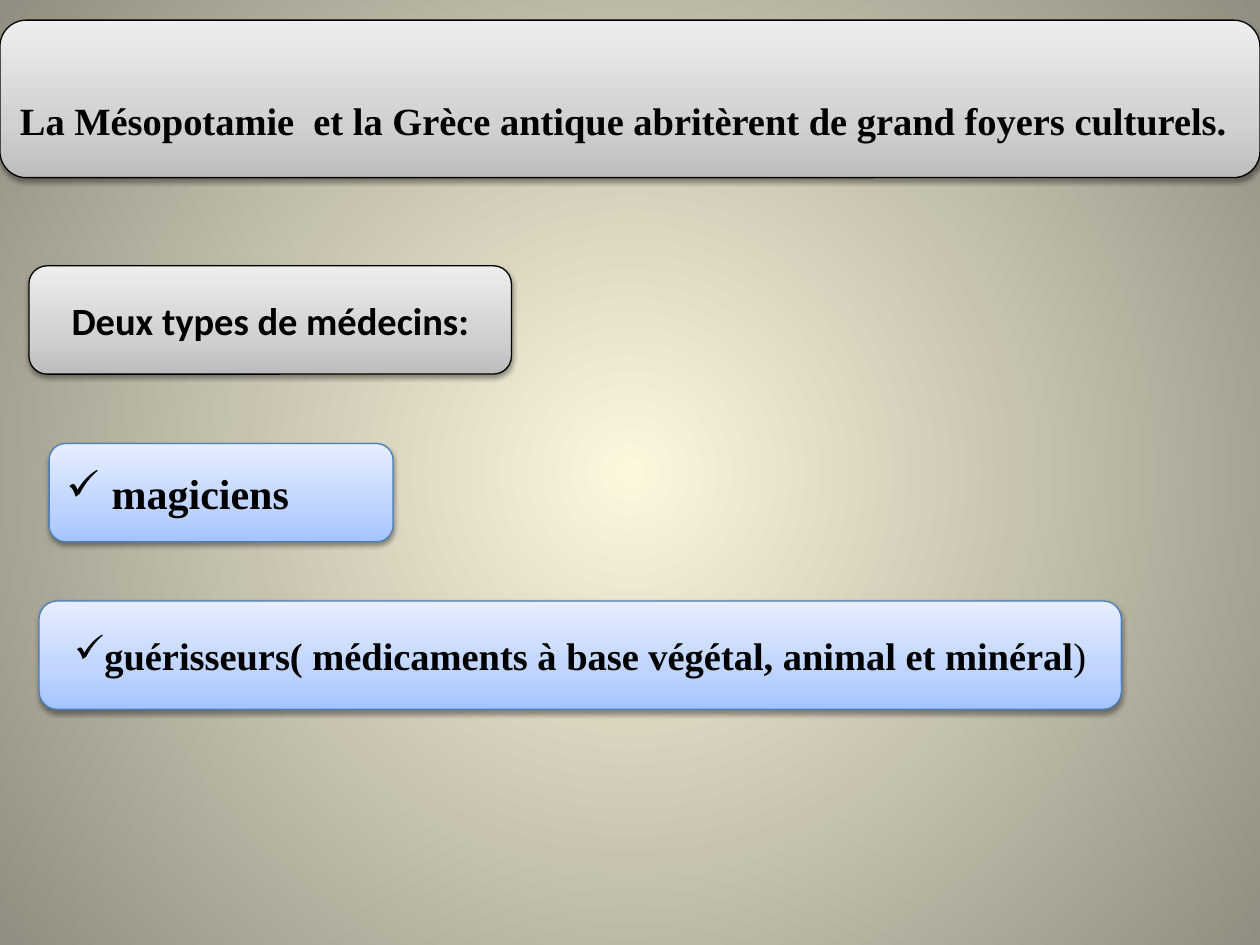
from lxml import etree
from pptx import Presentation
from pptx.dml.color import RGBColor
from pptx.enum.shapes import MSO_SHAPE
from pptx.enum.text import MSO_ANCHOR, PP_ALIGN
from pptx.oxml import parse_xml
from pptx.oxml.ns import nsdecls, qn
from pptx.util import Inches, Pt

ROUNDED = MSO_SHAPE.ROUNDED_RECTANGLE
MIDDLE = MSO_ANCHOR.MIDDLE
LEFT, CENTER = PP_ALIGN.LEFT, PP_ALIGN.CENTER

COLORS = {"text": "000000", "grey_line": "000000", "blue_line": "4B7EBC"}
BACKGROUND = [(0, "FCF7DD"), (100, "918E81")]
GRADIENTS = {
    "grey": [(0, "BDBDBD"), (35, "D1D1D1"), (100, "EEEEEE")],
    "blue": [(0, "A4C4FF"), (35, "BFD4FF"), (100, "E6EEFF")],
}
UPWARD = '<a:lin ang="16200000" scaled="0"/>'
RADIAL = ('<a:path path="circle">'
          '<a:fillToRect l="50000" t="50000" r="50000" b="50000"/></a:path>')
SHADOW = ('<a:outerShdw {} blurRad="{}" dist="{}" dir="5400000" rotWithShape="0">'
          '<a:srgbClr val="000000"><a:alpha val="38000"/></a:srgbClr></a:outerShdw>')


def set_gradient(fill, parent, stops, direction):
    """Give a fill any number of stops, linear or radial."""
    fill.gradient()
    old = parent.find(".//" + qn("a:gradFill"))
    gs = "".join(f'<a:gs pos="{pos * 1000}"><a:srgbClr val="{color}"/></a:gs>'
                 for pos, color in stops)
    new = parse_xml(f'<a:gradFill {nsdecls("a")} rotWithShape="1">'
                    f'<a:gsLst>{gs}</a:gsLst>{direction}</a:gradFill>')
    old.getparent().replace(old, new)


prs = Presentation()
prs.slide_width, prs.slide_height = Inches(10), Inches(7.5)
s = prs.slides.add_slide(prs.slide_layouts[6])
set_gradient(s.background.fill, s.element, BACKGROUND, RADIAL)

# box, theme, alignment, line spacing, bullet indent (None: no bullet),
# font, size, runs as (text, bold)
boxes = [
    ((0, 0.16, 10, 1.25), "grey", LEFT, 1.9, None, "Times New Roman", 22,
     [("La Mésopotamie  et la Grèce antique abritèrent de grand foyers culturels.", True)]),
    ((0.23, 2.11, 3.83, 0.86), "grey", CENTER, 1, None, "Calibri", 22,
     [("Deux types de médecins:", True)]),
    ((0.39, 3.52, 2.73, 0.78), "blue", LEFT, 1, 0.36, "Times New Roman", 24,
     [("magiciens", True)]),
    ((0.31, 4.77, 8.59, 0.86), "blue", CENTER, 1, 0, "Times New Roman", 22,
     [("guérisseurs( médicaments à base végétal, animal et minéral", True), (")", False)]),
]

for box, theme, align, spacing, indent, font, size, runs in boxes:
    sp = s.shapes.add_shape(ROUNDED, *map(Inches, box))
    spPr = sp.element.spPr
    set_gradient(sp.fill, spPr, GRADIENTS[theme], UPWARD)
    sp.line.color.rgb = RGBColor.from_string(COLORS[theme + "_line"])
    sp.line.width = Pt(0.75)
    sp.shadow.inherit = False
    spPr.find(qn("a:effectLst")).append(
        parse_xml(SHADOW.format(nsdecls("a"), Pt(3.1), Pt(1.6))))

    tf = sp.text_frame
    tf.word_wrap = True
    tf.vertical_anchor = MIDDLE
    p = tf.paragraphs[0]
    p.alignment = align
    p.line_spacing = spacing
    if indent is not None:
        pPr = p._p.get_or_add_pPr()
        pPr.set("marL", str(Inches(indent)))
        pPr.set("indent", str(-Inches(indent)))
        etree.SubElement(pPr, qn("a:buChar"), char="✓")
    for text, bold in runs:
        r = p.add_run()
        r.text = text
        r.font.name = font
        r.font.size = Pt(size)
        r.font.bold = bold
        r.font.color.rgb = RGBColor.from_string(COLORS["text"])

prs.save("out.pptx")
